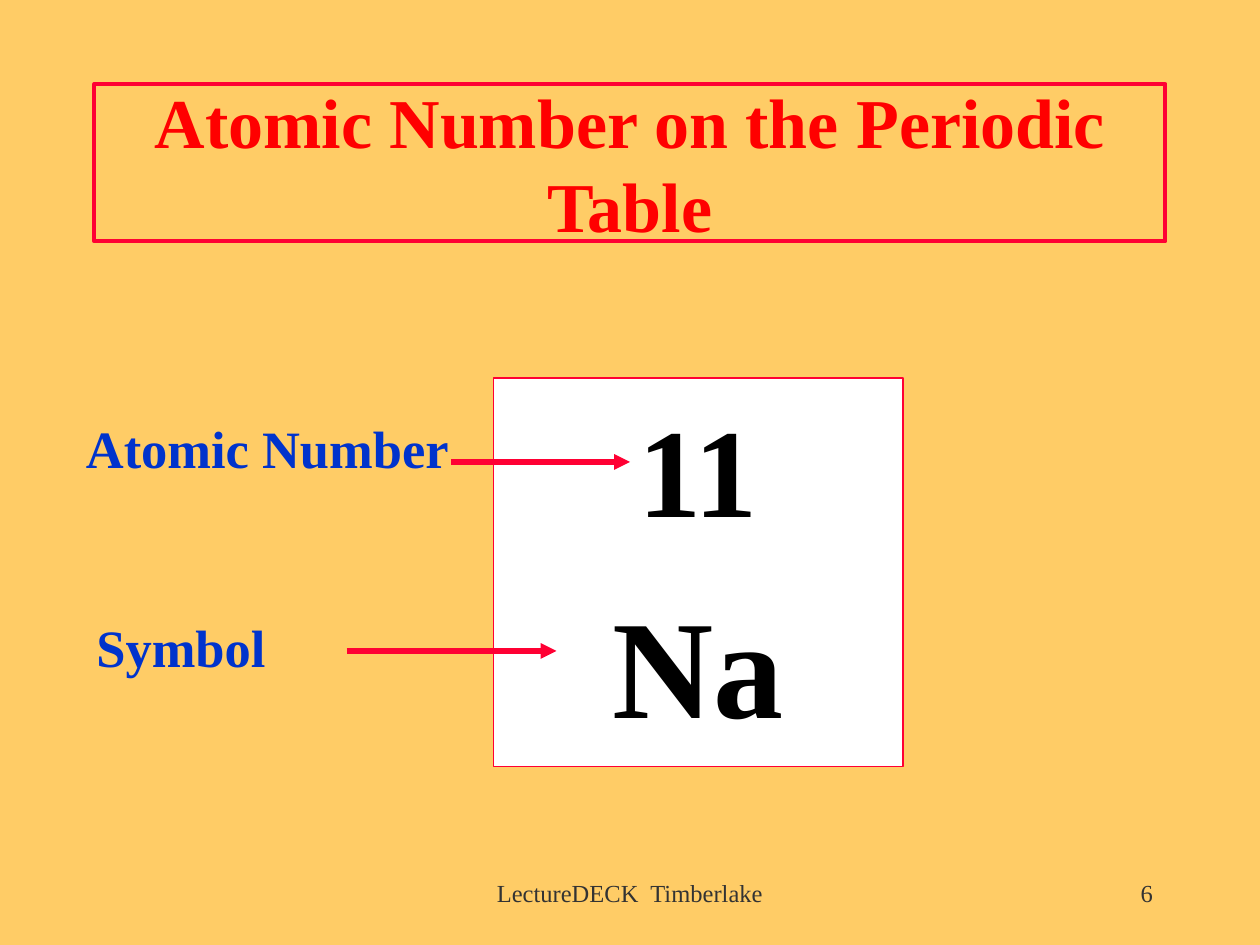
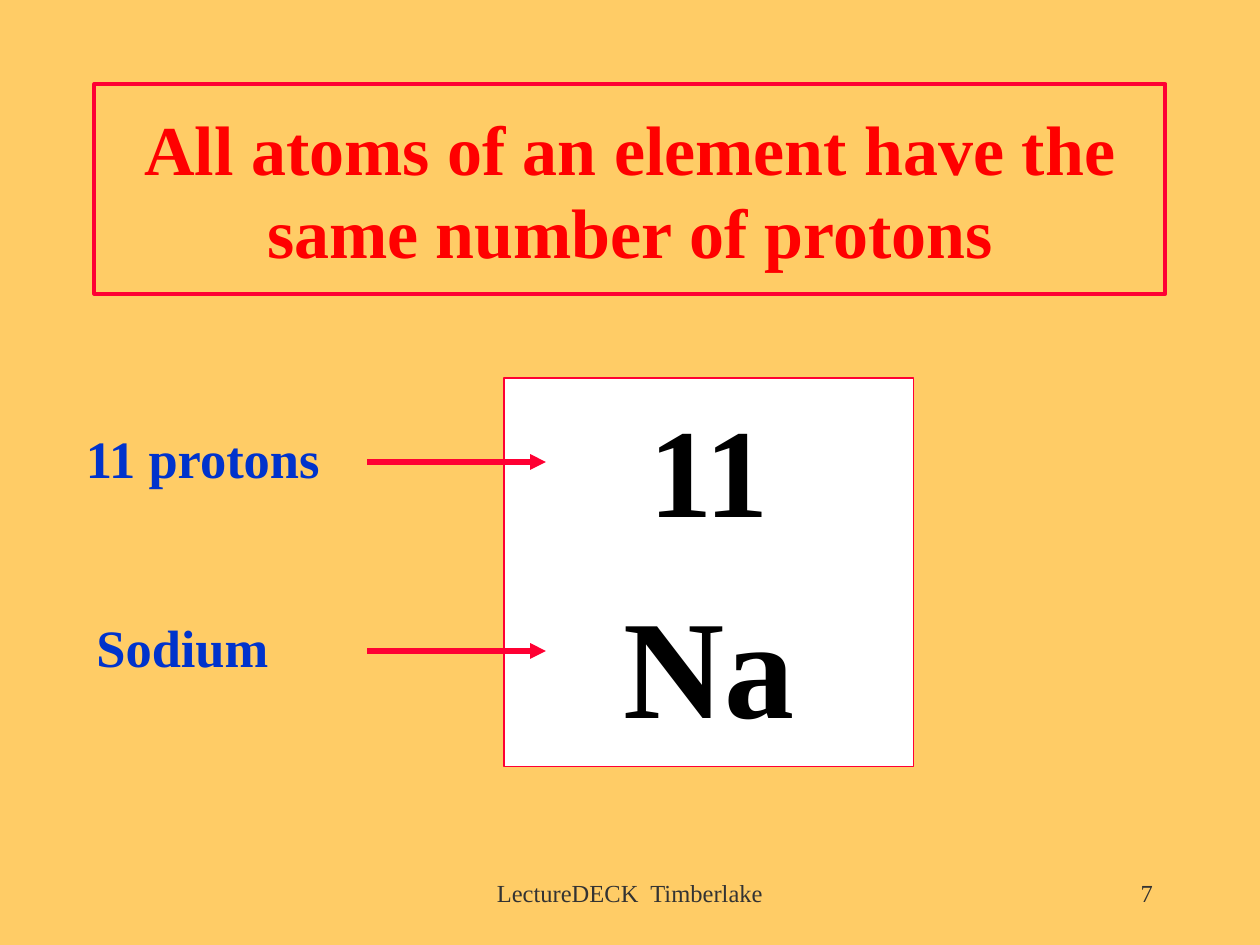
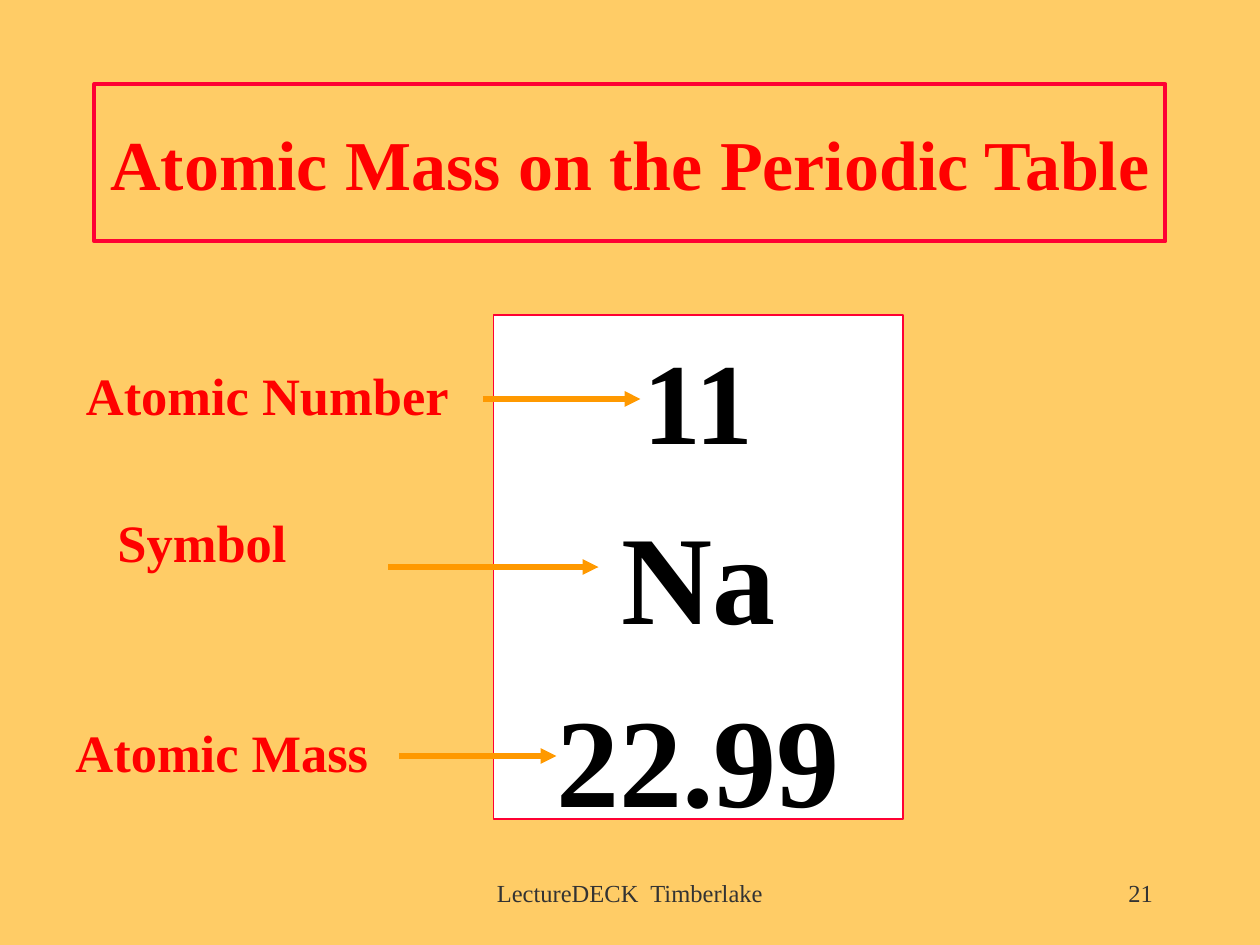
import pptx
import pptx.dml.color
import pptx.enum.shapes
import pptx.enum.text
import pptx.oxml.ns
import pptx.util
from lxml import etree

# Shared look
FONT = "Times New Roman"
SAND, WHITE, BLACK, GREY = "FFCC66", "FFFFFF", "000000", "333333"
CRIMSON, RED, BLUE, ORANGE = "FF0033", "FF0000", "0033CC", "FF9900"
FOOTER = "LectureDECK  Timberlake"

# The slide is a grid of 120 columns and 90 rows, 12 to the inch
COLUMNS, ROWS, CELLS_PER_INCH = 120, 90, 12
LABEL_ROWS = 7.2
TILE_COLUMNS = 39

ALIGN = pptx.enum.text.PP_ALIGN
ANCHOR = pptx.enum.text.MSO_ANCHOR


def cells(count):
    return pptx.util.Inches(count / CELLS_PER_INCH)


def color(hex_string):
    return pptx.dml.color.RGBColor.from_string(hex_string)


def add_run(paragraph, text, size, text_color, bold=True):
    run = paragraph.add_run()
    run.text = text
    run.font.name = FONT
    run.font.size = pptx.util.Pt(size)
    run.font.bold = bold
    run.font.color.rgb = color(text_color)


def add_text(slide, box, text, size, text_color, bold=True,
             align=ALIGN.LEFT, anchor=ANCHOR.TOP):
    """One unwrapped line of text."""
    frame = slide.shapes.add_textbox(*map(cells, box)).text_frame
    frame.word_wrap = False
    frame.vertical_anchor = anchor
    frame.paragraphs[0].alignment = align
    add_run(frame.paragraphs[0], text, size, text_color, bold)


def add_frame(slide, box, line_width, fill=None):
    """A crimson outlined rectangle, hollow unless a fill is given."""
    shape = slide.shapes.add_shape(
        pptx.enum.shapes.MSO_SHAPE.RECTANGLE, *map(cells, box))
    shape.shadow.inherit = False
    if fill:
        shape.fill.solid()
        shape.fill.fore_color.rgb = color(fill)
    else:
        shape.fill.background()
    shape.line.color.rgb = color(CRIMSON)
    shape.line.width = pptx.util.Pt(line_width)
    shape.text_frame.word_wrap = True
    return shape.text_frame


def add_title(slide, text, height):
    frame = add_frame(slide, (9, 8, 102, height), 2.25)
    frame.vertical_anchor = ANCHOR.MIDDLE
    frame.paragraphs[0].alignment = ALIGN.CENTER
    add_run(frame.paragraphs[0], text, 40, RED)


def add_element_tile(slide, left, top, height, entries):
    """The element's square of the periodic table: (text, size) per line."""
    frame = add_frame(slide, (left, top, TILE_COLUMNS, height), 0.75, WHITE)
    frame.vertical_anchor = ANCHOR.TOP
    frame.margin_top = pptx.util.Inches(0.11)
    for index, (text, size) in enumerate(entries):
        paragraph = frame.add_paragraph() if index else frame.paragraphs[0]
        paragraph.alignment = ALIGN.CENTER
        if index:
            paragraph.space_before = pptx.util.Pt(size / 4)
        add_run(paragraph, text, size, BLACK)


def add_arrow(slide, start, end, row, line_color):
    connector = slide.shapes.add_connector(
        pptx.enum.shapes.MSO_CONNECTOR.STRAIGHT,
        cells(start), cells(row), cells(end), cells(row))
    connector.line.color.rgb = color(line_color)
    connector.line.width = pptx.util.Pt(3)
    qualified = pptx.oxml.ns.qn
    etree.SubElement(connector.line._get_or_add_ln(),
                     qualified("a:tailEnd"), type="triangle")
    etree.SubElement(connector._element.spPr, qualified("a:effectLst"))


def add_footer(slide, number):
    for box, text, align in (((41, 82, 38, 6), FOOTER, ALIGN.CENTER),
                             ((86, 82, 25, 6), number, ALIGN.RIGHT)):
        add_text(slide, box, text, 14, GREY, False, align, ANCHOR.MIDDLE)


def add_element_slide(presentation, number, title, title_rows, tile,
                      labels, label_color, arrows, arrow_color):
    slide = presentation.slides.add_slide(presentation.slide_layouts[6])
    add_footer(slide, number)
    add_title(slide, title, title_rows)
    add_element_tile(slide, *tile)
    for text, left, top, width in labels:
        add_text(slide, (left, top, width, LABEL_ROWS), text, 30, label_color)
    for start, end, row in arrows:
        add_arrow(slide, start, end, row, arrow_color)


def main():
    presentation = pptx.Presentation()
    presentation.slide_width = cells(COLUMNS)
    presentation.slide_height = cells(ROWS)
    background = presentation.slide_master.background.fill
    background.solid()
    background.fore_color.rgb = color(SAND)

    number_and_symbol = [("11", 72), ("Na", 80)]

    # Atomic number
    add_element_slide(
        presentation, "6", "Atomic Number on the Periodic Table", 15,
        (47, 36, 37, number_and_symbol),
        [("Atomic Number", 7, 39, 37), ("Symbol", 8, 58, 18.5)], BLUE,
        [(33, 53, 62), (43, 60, 44)], CRIMSON)

    # Protons of sodium
    add_element_slide(
        presentation, "7",
        "All atoms of an element have the same number of protons", 20,
        (48, 36, 37, number_and_symbol),
        [("11 protons", 7, 40, 25), ("Sodium", 8, 58, 19)], BLUE,
        [(35, 52, 62), (35, 52, 44)], CRIMSON)

    # Atomic mass
    add_element_slide(
        presentation, "21", "Atomic Mass on the Periodic Table", 15,
        (47, 30, 48, [("11", 66), ("Na", 72), ("22.99", 72)]),
        [("Atomic Number", 7, 34, 37), ("Symbol", 10, 48, 18.5),
         ("Atomic Mass", 6, 68, 30.4)], RED,
        [(37, 57, 54), (46, 61, 38), (38, 53, 72)], ORANGE)

    presentation.save("out.pptx")


if __name__ == "__main__":
    main()
